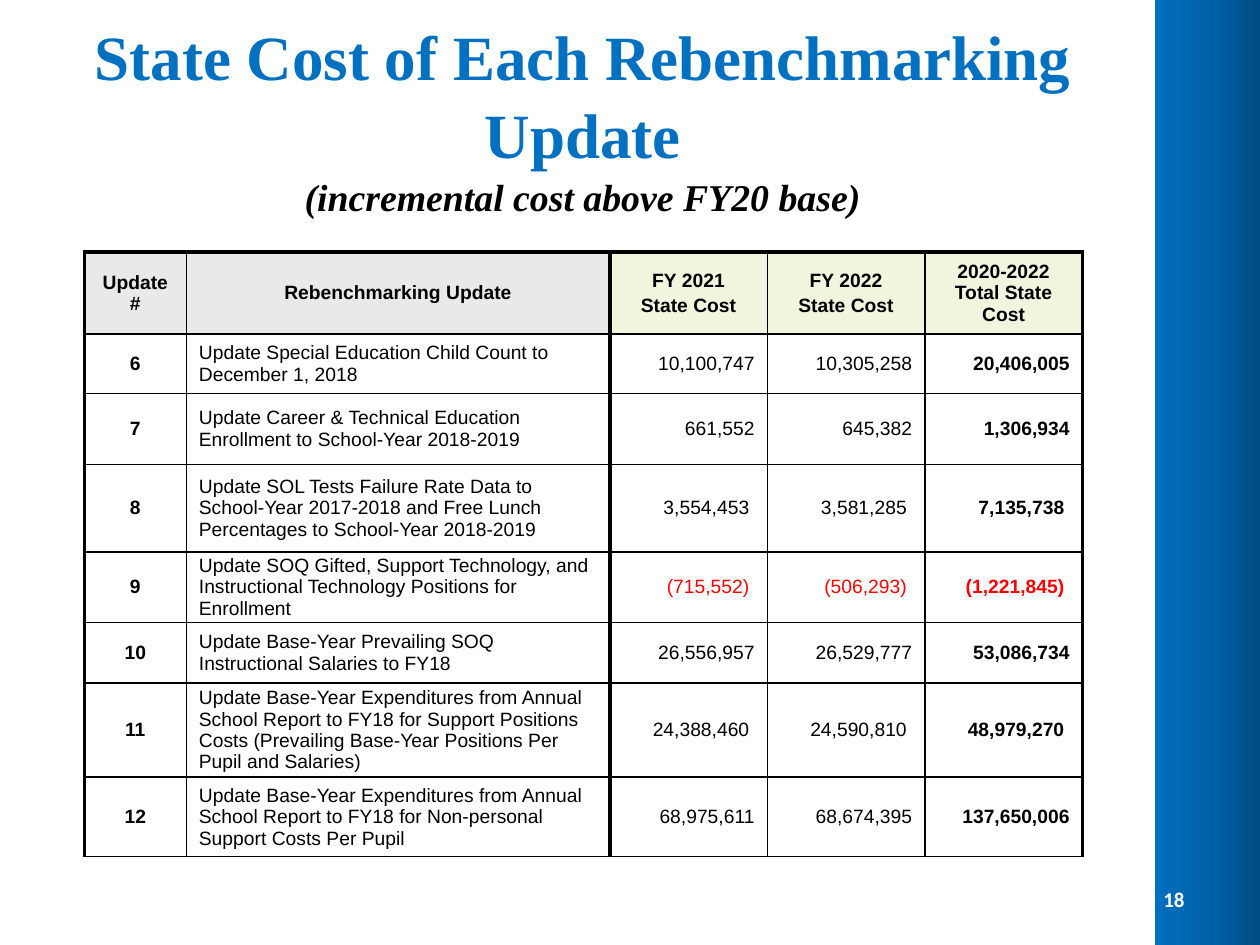
"""Build the slide on the state cost of each rebenchmarking update."""
from copy import deepcopy

from lxml import etree
from pptx import Presentation
from pptx import util as u
from pptx.dml import color
from pptx.enum import shapes, text
from pptx.oxml import ns

BLACK, BLUE, RED, WHITE = "000000", "0070C0", "FF0000", "FFFFFF"
THIN, THICK = 1, 2.25
INSET = 7.2
SHIFTED_INSET = 10.25
COLUMN_WIDTHS = [58.3, 242, 90, 90, 90]
ROW_HEIGHTS = [44.6, 34, 40.5, 50.2, 40.2, 34.7, 53.7, 45.5]
VERTICAL_RULES = [THICK, THIN, THICK, THIN, THIN, THICK]
HEADERS = ["Update #", "Rebenchmarking Update", "FY 2021\nState Cost",
           "FY 2022\nState Cost", "2020-2022 Total State Cost"]
HEADER_FILLS = ["E8EAE9"] * 2 + ["F3F4DE"] * 3
UPDATES = [
    ("6", "Update Special Education Child Count to December 1, 2018",
     "10,100,747", "10,305,258", "20,406,005"),
    ("7", "Update Career & Technical Education Enrollment to School-Year 2018-2019",
     "661,552", "645,382", "1,306,934"),
    ("8", "Update SOL Tests Failure Rate Data to School-Year 2017-2018 and "
     "Free Lunch Percentages to School-Year 2018-2019",
     "3,554,453", "3,581,285", "7,135,738"),
    ("9", "Update SOQ Gifted, Support Technology, and Instructional Technology "
     "Positions for Enrollment",
     "(715,552)", "(506,293)", "(1,221,845)"),
    ("10", "Update Base-Year Prevailing SOQ Instructional Salaries to FY18",
     "26,556,957", "26,529,777", "53,086,734"),
    ("11", "Update Base-Year Expenditures from Annual School Report to FY18 for "
     "Support Positions Costs (Prevailing Base-Year Positions Per Pupil and Salaries)",
     "24,388,460", "24,590,810", "48,979,270"),
    ("12", "Update Base-Year Expenditures from Annual School Report to FY18 for "
     "Non-personal Support Costs Per Pupil",
     "68,975,611", "68,674,395", "137,650,006"),
]
SHIFTED_UPDATES = {"8", "9", "11"}


def rgb(value):
    """Return the colour for a hex string."""
    return color.RGBColor.from_string(value)


def style_font(font, name, size, fill, bold=False, italic=False):
    """Set the face, size, colour and emphasis of a font."""
    font.name, font.size = name, u.Pt(size)
    font.bold, font.italic = bold, italic
    font.color.rgb = rgb(fill)


def add_text(slide, box, content, alignment):
    """Add a wrapped, vertically centred text box and return its paragraph."""
    frame = slide.shapes.add_textbox(*map(u.Pt, box)).text_frame
    frame.word_wrap = True
    frame.vertical_anchor = text.MSO_ANCHOR.MIDDLE
    frame.text = content
    paragraph = frame.paragraphs[0]
    paragraph.alignment = alignment
    return paragraph


def add_side_band(slide):
    """Add the gradient band along the right edge."""
    band = slide.shapes.add_shape(shapes.MSO_SHAPE.RECTANGLE,
                                  *map(u.Pt, (426, 234, 540, 72)))
    band.rotation = 270
    band.shadow.inherit = False
    band.line.fill.background()
    band.fill.gradient()
    band.fill.gradient_angle = 90
    stops = band.fill.gradient_stops
    first = band.element.spPr.find(".//" + ns.qn("a:gs"))
    first.addnext(deepcopy(first))
    stops = band.fill.gradient_stops
    for stop, position, value in zip(stops, (0, 0.5, 1), ("004272", "005EA2", BLUE)):
        stop.position = position
        stop.color.rgb = rgb(value)


def add_title(slide):
    """Add the title with its subtitle on a new line."""
    paragraph = add_text(
        slide, (36, 21.6, 594, 90),
        "State Cost of Each Rebenchmarking Update\v(incremental cost above FY20 base)",
        text.PP_ALIGN.CENTER)
    paragraph.line_spacing = 1.04
    heading, subtitle = paragraph.runs
    style_font(heading.font, "Times New Roman", 36, BLUE, bold=True)
    style_font(subtitle.font, "Times New Roman", 21.6, BLACK, bold=True, italic=True)


def set_borders(cell, left, right, top, bottom):
    """Draw the four black borders of a cell at the given widths."""
    properties = cell._tc.get_or_add_tcPr()
    for side, width in zip("LRTB", (left, right, top, bottom)):
        line = etree.SubElement(properties, ns.qn(f"a:ln{side}"), w=str(u.Pt(width)))
        fill = etree.SubElement(line, ns.qn("a:solidFill"))
        etree.SubElement(fill, ns.qn("a:srgbClr"), val=BLACK)


def fill_cell(cell, content, alignment, margins, bold, fill=None, ink=BLACK):
    """Write a cell and set its margins, text style and background."""
    cell.text_frame.text = content
    cell.vertical_anchor = text.MSO_ANCHOR.MIDDLE
    (cell.margin_left, cell.margin_top,
     cell.margin_right, cell.margin_bottom) = map(u.Pt, margins)
    for index, paragraph in enumerate(cell.text_frame.paragraphs):
        paragraph.alignment = alignment
        if index:
            paragraph.space_before = u.Pt(2.2)
        for run in paragraph.runs:
            style_font(run.font, "Arial", 11, ink, bold)
    if fill:
        cell.fill.solid()
        cell.fill.fore_color.rgb = rgb(fill)
    else:
        cell.fill.background()


def fill_update_row(cells, update):
    """Write one update: number, description and three costs."""
    number, description, *costs = update
    align = text.PP_ALIGN
    fill_cell(cells[0], number, align.CENTER, (0, 0, 0, 0), True)
    fill_cell(cells[1], description, align.LEFT, (INSET, 0, INSET, 0), False)
    inset = SHIFTED_INSET if number in SHIFTED_UPDATES else INSET
    for column, cost in enumerate(costs, 2):
        ink = RED if cost.startswith("(") else BLACK
        fill_cell(cells[column], cost, align.RIGHT, (0, 0, inset, 0), column == 4, ink=ink)


def add_cost_table(slide):
    """Add the table of costs by update."""
    table = slide.shapes.add_table(
        len(ROW_HEIGHTS), len(COLUMN_WIDTHS), u.Pt(48.2), u.Pt(144),
        u.Pt(sum(COLUMN_WIDTHS)), u.Pt(sum(ROW_HEIGHTS))).table
    for column, width in zip(table.columns, COLUMN_WIDTHS):
        column.width = u.Pt(width)
    for index, (row, height) in enumerate(zip(table.rows, ROW_HEIGHTS)):
        row.height = u.Pt(height)
        for column, cell in enumerate(row.cells):
            set_borders(cell, VERTICAL_RULES[column], VERTICAL_RULES[column + 1],
                        THIN if index else THICK, THIN)
    header, *body = table.rows
    for cell, label, fill in zip(header.cells, HEADERS, HEADER_FILLS):
        fill_cell(cell, label, text.PP_ALIGN.CENTER, (INSET, 3.6, INSET, 3.6), True, fill)
    for row, update in zip(body, UPDATES):
        fill_update_row(list(row.cells), update)


def add_page_number(slide):
    """Add the page number on the side band."""
    paragraph = add_text(slide, (654, 499, 30, 29), "18", text.PP_ALIGN.RIGHT)
    style_font(paragraph.runs[0].font, "Calibri", 12, WHITE, bold=True)


def main():
    """Build and save the presentation."""
    presentation = Presentation()
    presentation.slide_width, presentation.slide_height = u.Pt(720), u.Pt(540)
    slide = presentation.slides.add_slide(presentation.slide_layouts[6])
    add_side_band(slide)
    add_page_number(slide)
    add_cost_table(slide)
    add_title(slide)
    presentation.save("out.pptx")


if __name__ == "__main__":
    main()
